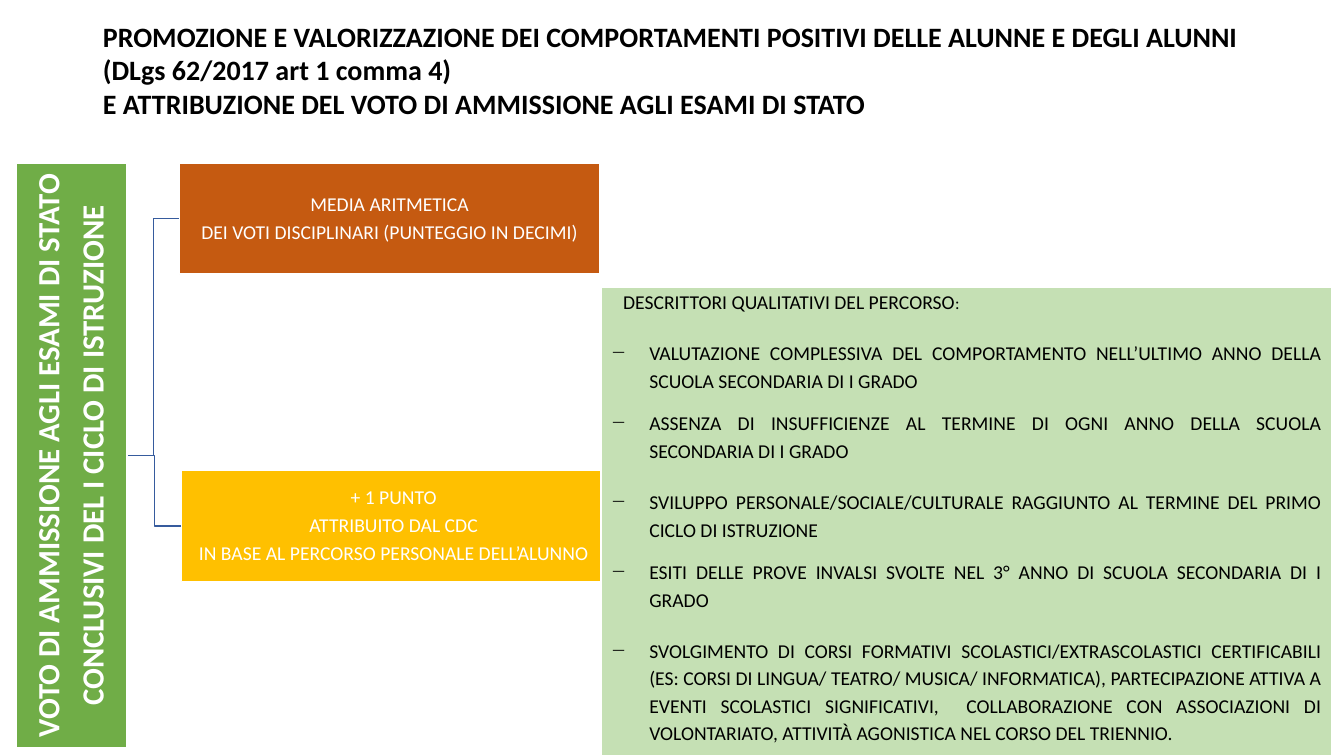
from typing import NamedTuple

from pptx import Presentation
from pptx.dml.color import RGBColor
from pptx.enum.shapes import MSO_CONNECTOR, MSO_SHAPE
from pptx.enum.text import MSO_ANCHOR, MSO_AUTO_SIZE, PP_ALIGN
from pptx.oxml.ns import qn
from pptx.util import Inches, Pt
from lxml.etree import SubElement

CELL = Inches(0.1)
COLUMNS, ROWS = 133.3, 75
FONT = "Calibri"
BLACK, WHITE = "000000", "FFFFFF"
GREEN, RUST, AMBER, PALE_GREEN = "70AD47", "C55A11", "FFC000", "C5E0B4"
BRANCH_BLUE = "365B9D"

TITLE = (
    "PROMOZIONE E VALORIZZAZIONE DEI COMPORTAMENTI POSITIVI DELLE ALUNNE E DEGLI ALUNNI "
    "(DLgs 62/2017 art 1 comma 4)\v"
    "E ATTRIBUZIONE DEL VOTO DI AMMISSIONE AGLI ESAMI DI STATO"
)
EXAM_GRADE = "VOTO DI AMMISSIONE AGLI ESAMI DI STATO\nCONCLUSIVI DEL I CICLO DI ISTRUZIONE"
AVERAGE = "MEDIA ARITMETICA\nDEI VOTI DISCIPLINARI (PUNTEGGIO IN DECIMI)"
EXTRA_POINT = "+ 1 PUNTO\nATTRIBUITO DAL CDC\nIN BASE AL PERCORSO PERSONALE DELL’ALUNNO"
HEADING = "DESCRITTORI QUALITATIVI DEL PERCORSO"
DESCRIPTORS = [
    "VALUTAZIONE COMPLESSIVA DEL COMPORTAMENTO NELL’ULTIMO ANNO DELLA SCUOLA SECONDARIA DI I GRADO",
    "ASSENZA DI INSUFFICIENZE AL TERMINE DI OGNI ANNO DELLA SCUOLA SECONDARIA DI I GRADO",
    "SVILUPPO PERSONALE/SOCIALE/CULTURALE RAGGIUNTO AL TERMINE DEL PRIMO CICLO DI ISTRUZIONE",
    "ESITI DELLE PROVE INVALSI SVOLTE NEL 3° ANNO DI SCUOLA SECONDARIA DI I GRADO",
    "SVOLGIMENTO DI CORSI FORMATIVI SCOLASTICI/EXTRASCOLASTICI CERTIFICABILI "
    "(ES: CORSI DI LINGUA/ TEATRO/ MUSICA/ INFORMATICA), PARTECIPAZIONE ATTIVA A "
    "EVENTI SCOLASTICI SIGNIFICATIVI,  COLLABORAZIONE CON ASSOCIAZIONI DI "
    "VOLONTARIATO, ATTIVITÀ AGONISTICA NEL CORSO DEL TRIENNIO.",
]
WIDE_GAP, NARROW_GAP = 17, 11


class Box(NamedTuple):
    left: float
    top: float
    width: float
    height: float

    @property
    def middle(self):
        return self.top + self.height / 2

    def emu(self):
        return [cells(length) for length in self]


def cells(count):
    return round(count * CELL)


def color(hex_string):
    return RGBColor.from_string(hex_string)


def format_runs(paragraph, size, hex_string, bold=False):
    for run in paragraph.runs:
        run.font.name = FONT
        run.font.size = Pt(size)
        run.font.bold = bold
        run.font.color.rgb = color(hex_string)


def set_margins(holder, horizontal, vertical):
    holder.margin_left = holder.margin_right = Inches(horizontal)
    holder.margin_top = holder.margin_bottom = Inches(vertical)


def add_title(slide, box):
    title = slide.shapes.title
    title.left, title.top, title.width, title.height = box.emu()
    frame = title.text_frame
    frame.text = TITLE
    frame.word_wrap = True
    frame.auto_size = MSO_AUTO_SIZE.NONE
    frame.vertical_anchor = MSO_ANCHOR.MIDDLE
    heading = frame.paragraphs[0]
    heading.alignment = PP_ALIGN.LEFT
    format_runs(heading, 20, BLACK, bold=True)


def add_node(slide, box, text, fill, size=14, bold=False, rotation=0, margin=0.01):
    node = slide.shapes.add_shape(MSO_SHAPE.RECTANGLE, *box.emu())
    node.shadow.inherit = False
    node.rotation = rotation
    node.fill.solid()
    node.fill.fore_color.rgb = color(fill)
    node.line.color.rgb = color(WHITE)
    node.line.width = Pt(1)
    frame = node.text_frame
    frame.text = text
    frame.word_wrap = True
    frame.vertical_anchor = MSO_ANCHOR.MIDDLE
    set_margins(frame, margin, margin)
    for paragraph in frame.paragraphs:
        paragraph.alignment = PP_ALIGN.CENTER
        paragraph.line_spacing = 0.9
        paragraph.space_after = Pt(round(size * 0.35, 1))
        format_runs(paragraph, size, WHITE, bold)


def add_branch(slide, root, child):
    branch = slide.shapes.add_connector(
        MSO_CONNECTOR.ELBOW,
        cells(root.left + root.width), cells(root.middle),
        cells(child.left), cells(child.middle),
    )
    branch.line.color.rgb = color(BRANCH_BLUE)
    branch.line.width = Pt(1)
    SubElement(branch._element.spPr, qn("a:effectLst"))


def add_grade_tree(slide, root, average, extra_point):
    for child in (extra_point, average):
        add_branch(slide, root, child)
    turned = Box(
        root.left + (root.width - root.height) / 2,
        root.middle - root.width / 2,
        root.height,
        root.width,
    )
    add_node(slide, turned, EXAM_GRADE, GREEN, 22, True, 270, 0.02)
    add_node(slide, average, AVERAGE, RUST)
    add_node(slide, extra_point, EXTRA_POINT, AMBER)


def add_borders(cell):
    properties = cell._tc.get_or_add_tcPr()
    for side in ("lnL", "lnR", "lnT", "lnB"):
        border = SubElement(properties, qn(f"a:{side}"), w=str(Pt(1)))
        fill = SubElement(border, qn("a:solidFill"))
        SubElement(fill, qn("a:srgbClr"), val=WHITE)


def indent(paragraph, left, first=0):
    properties = paragraph._p.get_or_add_pPr()
    properties.set("marL", str(Inches(left)))
    properties.set("indent", str(Inches(first)))
    return properties


def add_descriptors(slide, box):
    table = slide.shapes.add_table(1, 1, *box.emu()).table
    table.first_row = table.horz_banding = False
    cell = table.cell(0, 0)
    add_borders(cell)
    cell.fill.solid()
    cell.fill.fore_color.rgb = color(PALE_GREEN)
    set_margins(cell, 0.1, 0)
    frame = cell.text_frame
    frame.text = "\n".join([HEADING, *DESCRIPTORS])
    heading, *items = frame.paragraphs
    for paragraph in frame.paragraphs:
        paragraph.alignment = PP_ALIGN.JUSTIFY
        paragraph.line_spacing = 1.15
        format_runs(paragraph, 14, BLACK)
    colon = heading.add_run()
    colon.text = ":"
    colon.font.name = FONT
    colon.font.size = Pt(12)
    colon.font.color.rgb = color(BLACK)
    indent(heading, 0.12)
    for number, item in enumerate(items):
        item.space_before = Pt(NARROW_GAP if number % 2 else WIDE_GAP)
        SubElement(indent(item, 0.38, -0.38), qn("a:buChar"), char="─")


def main():
    presentation = Presentation()
    presentation.slide_width = cells(COLUMNS)
    presentation.slide_height = cells(ROWS)
    slide = presentation.slides.add_slide(presentation.slide_layouts[5])
    add_title(slide, Box(9.2, 0.8, 115, 12.2))
    add_grade_tree(
        slide,
        root=Box(1.6, 16.2, 11, 58),
        average=Box(17.8, 16.2, 41.7, 11),
        extra_point=Box(18, 46.7, 42.1, 11),
    )
    add_descriptors(slide, Box(59.6, 28.5, 72.5, ROWS - 28.5))
    presentation.save("out.pptx")


if __name__ == "__main__":
    main()
